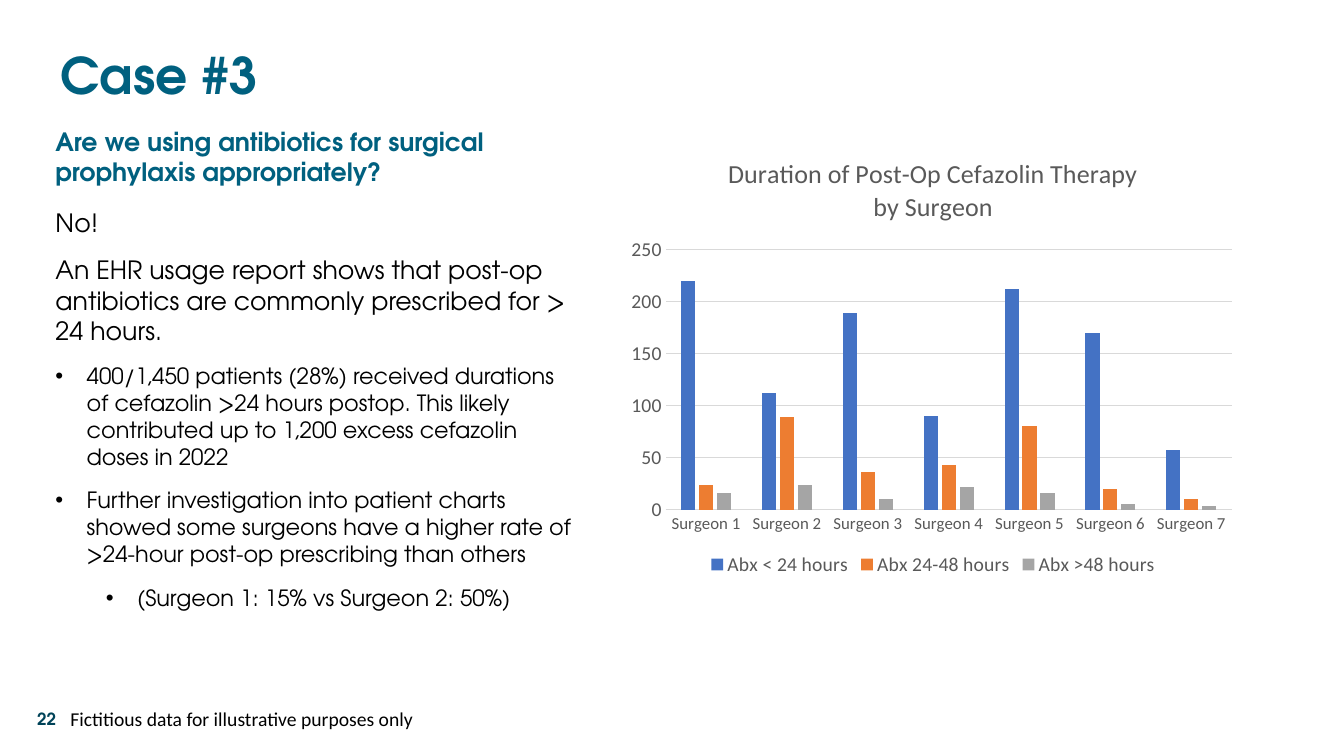
from lxml import etree
from pptx import Presentation
from pptx.chart.data import CategoryChartData
from pptx.dml.color import RGBColor
from pptx.enum.chart import XL_CHART_TYPE, XL_LEGEND_POSITION, XL_TICK_MARK
from pptx.enum.text import MSO_ANCHOR, MSO_AUTO_SIZE, PP_ALIGN
from pptx.oxml import parse_xml
from pptx.oxml.ns import nsdecls, qn
from pptx.util import Emu, Pt

EMU_PER_PX = 9144  # 100 px to the inch
HEADING_FONT = "TeX Gyre Adventor"
CHART_FONT = "Calibri"

BLACK = RGBColor(0x00, 0x00, 0x00)
TEAL = RGBColor(0x00, 0x60, 0x7F)
DARK_TEAL = RGBColor(0x00, 0x43, 0x58)
GREY = RGBColor(0x59, 0x59, 0x59)
LIGHT_GREY = RGBColor(0xD9, 0xD9, 0xD9)
BLUE = RGBColor(0x44, 0x72, 0xC4)
ORANGE = RGBColor(0xED, 0x7D, 0x31)
MID_GREY = RGBColor(0xA5, 0xA5, 0xA5)

TOP, MIDDLE = MSO_ANCHOR.TOP, MSO_ANCHOR.MIDDLE
LEFT = PP_ALIGN.LEFT
NO_AUTOFIT = MSO_AUTO_SIZE.NONE
COLUMNS = XL_CHART_TYPE.COLUMN_CLUSTERED
LEGEND_BOTTOM = XL_LEGEND_POSITION.BOTTOM
NO_TICKS = XL_TICK_MARK.NONE

# Text, size, level, indent in px (None for no bullet)
FINDINGS = [
    ("No!", 18, 0, None),
    ("An EHR usage report shows that post-op antibiotics are commonly "
     "prescribed for > 24 hours.", 18, 0, None),
    ("400/1,450 patients (28%) received durations of cefazolin >24 hours postop. "
     "This likely contributed up to 1,200 excess cefazolin doses in 2022", 16, 0, 31),
    ("Further investigation into patient charts showed some surgeons have a "
     "higher rate of >24-hour post-op prescribing than others", 16, 0, 31),
    ("(Surgeon 1: 15% vs Surgeon 2: 50%)", 16, 1, 81),
]
DURATIONS = [
    ("Abx < 24 hours", (220, 112, 189, 90, 212, 170, 57), BLUE),
    ("Abx 24-48 hours", (24, 89, 36, 43, 80, 20, 10), ORANGE),
    ("Abx >48 hours", (16, 24, 10, 22, 16, 6, 4), MID_GREY),
]


def px(length):
    return Emu(length * EMU_PER_PX)


def style_font(font, name, size, color, bold=False):
    font.name = name
    font.size = Pt(size)
    font.bold = bold
    font.color.rgb = color


class SlideBuilder:
    def __init__(self, presentation):
        self.slide = presentation.slides.add_slide(presentation.slide_layouts[1])

    def place(self, shape, box):
        shape.left, shape.top, shape.width, shape.height = map(px, box)

    def title(self, text, box):
        shape = self.slide.shapes.title
        self.place(shape, box)
        frame = shape.text_frame
        frame.text = text
        frame.auto_size = NO_AUTOFIT
        frame.vertical_anchor = TOP
        frame.margin_left = frame.margin_top = frame.margin_right = frame.margin_bottom = 0
        paragraph = frame.paragraphs[0]
        paragraph.alignment = LEFT
        paragraph.line_spacing = 0.9
        style_font(paragraph.runs[0].font, HEADING_FONT, 36, TEAL, True)

    def bullet_list(self, items, box):
        shape = self.slide.placeholders[1]
        self.place(shape, box)
        frame = shape.text_frame
        frame.text = "\n".join(item[0] for item in items)
        frame.auto_size = NO_AUTOFIT
        frame.vertical_anchor = TOP
        for index, (paragraph, item) in enumerate(zip(frame.paragraphs, items)):
            _, size, level, indent = item
            paragraph.level = level
            self.set_bullet(paragraph, indent)
            paragraph.space_before = Pt(6 if index else 0)
            paragraph.space_after = Pt(6)
            style_font(paragraph.runs[0].font, HEADING_FONT, size, BLACK)

    def set_bullet(self, paragraph, indent):
        properties = paragraph._p.get_or_add_pPr()
        properties.set("marL", str(px(indent or 0)))
        properties.set("indent", str(px(-31 if indent else 0)))
        if indent:
            etree.SubElement(properties, qn("a:buFont"), typeface="Arial")
            etree.SubElement(properties, qn("a:buChar"), char="•")
        else:
            etree.SubElement(properties, qn("a:buNone"))

    def label(self, text, box, size, color, font=HEADING_FONT, bold=True, anchor=TOP):
        frame = self.slide.shapes.add_textbox(*map(px, box)).text_frame
        frame.word_wrap = True
        frame.vertical_anchor = anchor
        frame.text = text
        style_font(frame.paragraphs[0].runs[0].font, font, size, color, bold)

    def column_chart(self, title, categories, series_rows, box):
        data = CategoryChartData()
        data.categories = categories
        for name, values, _ in series_rows:
            data.add_series(name, values)
        chart = self.slide.shapes.add_chart(COLUMNS, *map(px, box), data).chart
        style_font(chart.font, CHART_FONT, 10, BLACK)

        chart.has_title = True
        title_frame = chart.chart_title.text_frame
        title_frame.text = title
        for paragraph in title_frame.paragraphs:
            style_font(paragraph.runs[0].font, CHART_FONT, 18.6, GREY)
        chart.chart_title.include_in_layout = False

        chart.has_legend = True
        chart.legend.position = LEGEND_BOTTOM
        chart.legend.include_in_layout = False
        style_font(chart.legend.font, CHART_FONT, 14, GREY)

        plot = chart.plots[0]
        plot.gap_width = 219
        plot.overlap = -27
        plot.vary_by_categories = False
        for series, (_, _, color) in zip(plot.series, series_rows):
            series.format.fill.solid()
            series.format.fill.fore_color.rgb = color

        for axis, size in ((chart.category_axis, 12), (chart.value_axis, 14)):
            axis.major_tick_mark = axis.minor_tick_mark = NO_TICKS
            style_font(axis.tick_labels.font, CHART_FONT, size, GREY)
        chart.value_axis.minimum_scale = 0
        chart.value_axis.maximum_scale = 250
        chart.value_axis.major_unit = 50
        chart.value_axis.format.line.fill.background()
        for line in (chart.category_axis.format.line,
                     chart.value_axis.major_gridlines.format.line):
            line.color.rgb = LIGHT_GREY
            line.width = Pt(0.75)
        self.set_plot_area(chart, x=0.07, y=0.25, w=0.91, h=0.59)

    def set_plot_area(self, chart, **fractions):
        """Fix the inner plot area as fractions of the chart."""
        plot_area = chart._chartSpace.chart.plotArea
        for layout in plot_area.findall(qn("c:layout")):
            plot_area.remove(layout)
        sizes = "".join(f'<c:{key} val="{value}"/>' for key, value in fractions.items())
        plot_area.insert(0, parse_xml(
            f'<c:layout {nsdecls("c")}><c:manualLayout><c:layoutTarget val="inner"/>'
            f'<c:xMode val="edge"/><c:yMode val="edge"/>{sizes}'
            '</c:manualLayout></c:layout>'))


def main():
    presentation = Presentation()
    presentation.slide_width = px(1333)
    presentation.slide_height = px(750)
    builder = SlideBuilder(presentation)
    builder.title("Case #3", (60, 51, 1114, 60))
    builder.label("Are we using antibiotics for surgical prophylaxis appropriately?",
                  (45, 120, 520, 80), 18, TEAL)
    builder.bullet_list(FINDINGS, (45, 201, 532, 470))
    surgeons = [f"Surgeon {number}" for number in range(1, 8)]
    builder.column_chart("Duration of Post-Op Cefazolin Therapy\nby Surgeon",
                         surgeons, DURATIONS, (617, 138, 617, 438))
    builder.label("22", (27, 693, 40, 40), 12, DARK_TEAL, anchor=MIDDLE)
    builder.label("Fictitious data for illustrative purposes only",
                  (60, 696, 370, 34), 14, BLACK, font=CHART_FONT, bold=False)
    presentation.save("out.pptx")


if __name__ == "__main__":
    main()
